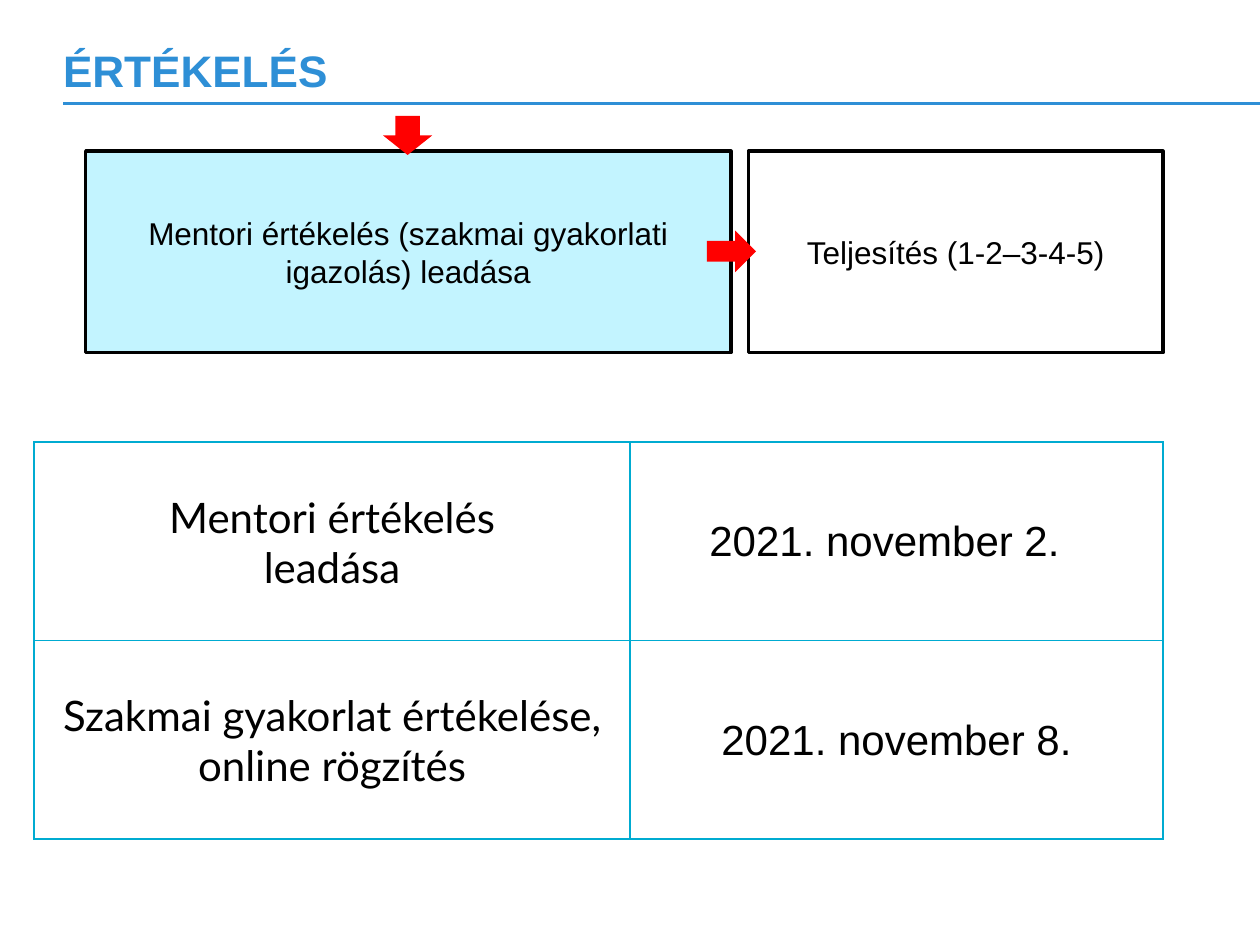
from lxml.etree import SubElement
from pptx import Presentation
from pptx.dml.color import RGBColor
from pptx.enum.shapes import MSO_CONNECTOR, MSO_SHAPE
from pptx.enum.text import MSO_ANCHOR, PP_ALIGN
from pptx.oxml.ns import qn
from pptx.util import Inches, Pt

COLORS = {
    "title": "2E8FD6",
    "ink": "000000",
    "paper": "FFFFFF",
    "highlight": "C3F4FF",
    "arrow": "FF0000",
    "grid": "00ABD1",
}
DEADLINES = [
    ("Mentori értékelés\nleadása", "2021. november 2."),
    ("Szakmai gyakorlat értékelése, online rögzítés", "2021. november 8."),
]


def color(name):
    """Return the named palette colour."""
    return RGBColor.from_string(COLORS[name])


def write(frame, text, size=18, font="Arial", ink="ink", bold=False, align=PP_ALIGN.CENTER):
    """Fill a text frame, one paragraph for each line of text."""
    frame.word_wrap = True
    frame.text = text
    for paragraph in frame.paragraphs:
        paragraph.alignment = align
        paragraph.font.size = Pt(size)
        paragraph.font.name = font
        paragraph.font.bold = bold
        paragraph.font.color.rgb = color(ink)


def add_block(slide, kind, left, top, width, height, fill, outlined=False):
    """Add a flat preset shape, with a black outline if asked for."""
    block = slide.shapes.add_shape(kind, Inches(left), Inches(top), Inches(width), Inches(height))
    block.shadow.inherit = False
    block.fill.solid()
    block.fill.fore_color.rgb = color(fill)
    if outlined:
        block.line.color.rgb = color("ink")
        block.line.width = Pt(2)
    else:
        block.line.fill.background()
    return block


def add_heading(slide, left, top, width, height):
    """Place the title and the rule that runs below it to the slide edge."""
    title = slide.shapes.title
    title.left, title.top = Inches(left), Inches(top)
    title.width, title.height = Inches(width), Inches(height)
    frame = title.text_frame
    frame.margin_left = frame.margin_right = frame.margin_top = frame.margin_bottom = 0
    frame.vertical_anchor = MSO_ANCHOR.MIDDLE
    write(frame, "ÉRTÉKELÉS", size=25.2, ink="title", bold=True, align=PP_ALIGN.LEFT)
    rule_y = Inches(0.82)
    rule = slide.shapes.add_connector(
        MSO_CONNECTOR.STRAIGHT, Inches(left), rule_y, Inches(10), rule_y)
    rule.line.color.rgb = color("title")
    rule.line.width = Pt(1.5)
    SubElement(rule._element.spPr, qn("a:effectLst"))


def add_process(slide, left, top, width, height):
    """Draw the two evaluation steps and the arrows leading into them."""
    submission_width, result_width = 5.12, 3.29
    steps = [
        ("Mentori értékelés (szakmai gyakorlati igazolás) leadása",
         left, submission_width, "highlight"),
        ("Teljesítés (1-2–3-4-5)", left + width - result_width, result_width, "paper"),
    ]
    for text, step_left, step_width, fill in steps:
        step = add_block(slide, MSO_SHAPE.RECTANGLE, step_left, top, step_width, height,
                         fill, outlined=True)
        step.text_frame.vertical_anchor = MSO_ANCHOR.MIDDLE
        write(step.text_frame, text)
    add_block(slide, MSO_SHAPE.RIGHT_ARROW, left + 4.93, top + height / 2 - 0.17,
              0.39, 0.33, "arrow")
    add_block(slide, MSO_SHAPE.DOWN_ARROW, left + submission_width / 2 - 0.2, top - 0.28,
              0.39, 0.31, "arrow")


def add_borders(cell):
    """Draw a thin line on all four sides of a table cell."""
    properties = cell._tc.get_or_add_tcPr()
    for side in ("a:lnL", "a:lnR", "a:lnT", "a:lnB"):
        border = SubElement(properties, qn(side), w=str(Pt(1)))
        SubElement(SubElement(border, qn("a:solidFill")), qn("a:srgbClr"), val=COLORS["grid"])


def add_deadlines(slide, left, top, width, height):
    """Build the table of tasks and their dates."""
    task_width = 4.73
    table = slide.shapes.add_table(
        len(DEADLINES), 2, Inches(left), Inches(top), Inches(width), Inches(height)).table
    table.first_row = table.horz_banding = False
    table.columns[0].width = Inches(task_width)
    table.columns[1].width = Inches(width - task_width)
    for row, deadline in enumerate(DEADLINES):
        for column, (text, font) in enumerate(zip(deadline, ("Lato", "Arial"))):
            cell = table.cell(row, column)
            add_borders(cell)
            cell.fill.solid()
            cell.fill.fore_color.rgb = color("paper")
            cell.margin_left = cell.margin_right = cell.margin_top = Inches(0.01)
            cell.margin_bottom = 0
            cell.vertical_anchor = MSO_ANCHOR.MIDDLE
            write(cell.text_frame, text, size=24, font=font)
    table.cell(0, 1).margin_right = Inches(0.2)


def main():
    """Build and save the evaluation slide."""
    deck = Presentation()
    deck.slide_width, deck.slide_height = Inches(10), Inches(7.5)
    slide = deck.slides.add_slide(deck.slide_layouts[5])
    add_heading(slide, 0.5, 0.4, 9, 0.31)
    add_process(slide, 0.68, 1.2, 8.55, 1.6)
    add_deadlines(slide, 0.27, 3.51, 8.96, 3.15)
    deck.save("out.pptx")


if __name__ == "__main__":
    main()
